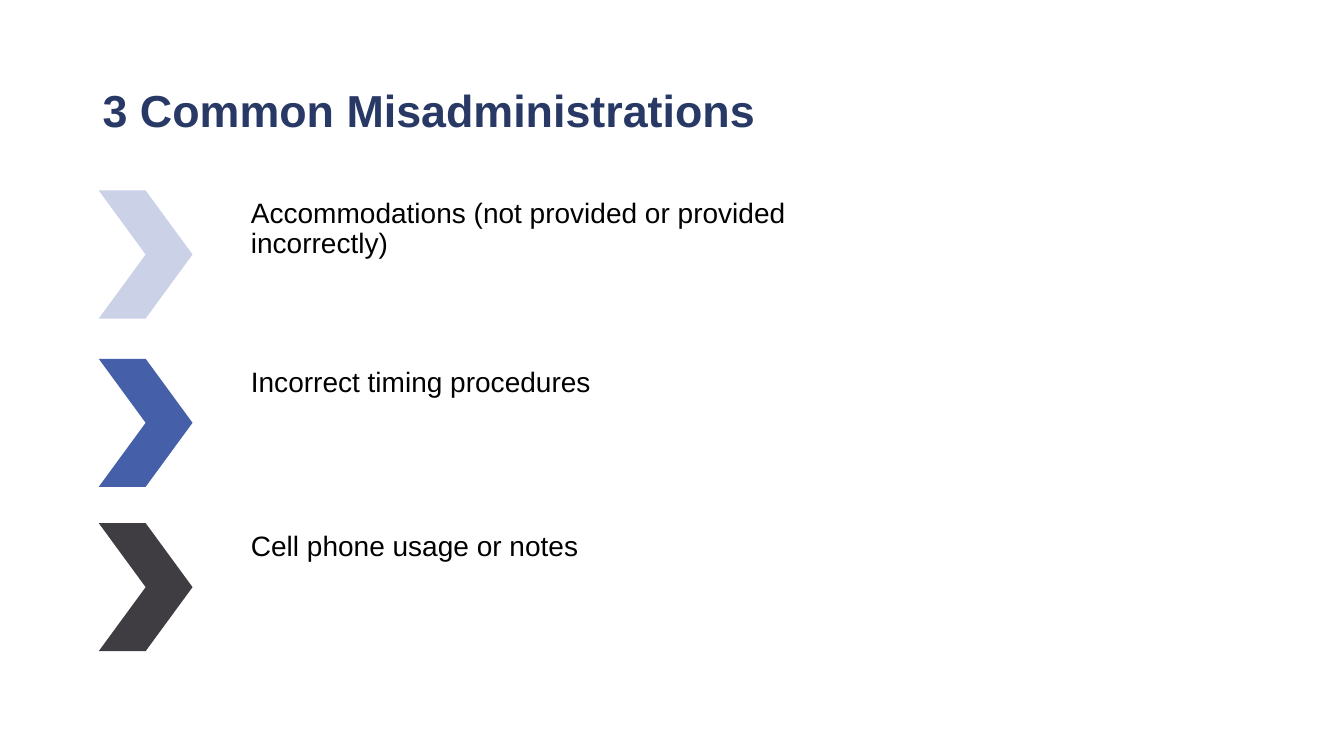
from pptx import Presentation
from pptx.dml.color import RGBColor
from pptx.enum.shapes import MSO_SHAPE
from pptx.enum.text import MSO_ANCHOR
from pptx.util import Inches, Pt

TITLE = "3 Common Misadministrations"
ITEMS = [
    (1.89, "CBD1E7", "Accommodations (not provided or provided incorrectly)"),
    (3.56, "455FA9", "Incorrect timing procedures"),
    (5.19, "403D42", "Cell phone usage or notes"),
]


def color(value):
    return RGBColor.from_string(value)


def add_text(page, place, text, size, ink, bold=False, anchor=MSO_ANCHOR.TOP, before=0):
    box = page.shapes.add_textbox(*map(Inches, place))
    frame = box.text_frame
    frame.word_wrap = True
    frame.vertical_anchor = anchor
    para = frame.paragraphs[0]
    para.text = text
    para.line_spacing = 0.9
    para.space_before = Pt(before)
    para.font.name = "Arial"
    para.font.size = Pt(size)
    para.font.bold = bold
    para.font.color.rgb = color(ink)


def add_chevron(page, place, fill):
    chevron = page.shapes.add_shape(MSO_SHAPE.CHEVRON, *map(Inches, place))
    chevron.shadow.inherit = False
    chevron.fill.solid()
    chevron.fill.fore_color.rgb = color(fill)
    chevron.line.fill.background()


def main():
    deck = Presentation()
    deck.slide_width = Inches(13.33)
    deck.slide_height = Inches(7.5)
    page = deck.slides.add_slide(deck.slide_layouts[6])
    add_text(page, (0.92, 0.4, 11.5, 1.45), TITLE, 32, "293965",
             bold=True, anchor=MSO_ANCHOR.MIDDLE)
    for top, fill, text in ITEMS:
        add_text(page, (2.39, top + 0.04, 5.67, 1.2), text, 20, "000000", before=10)
        add_chevron(page, (0.98, top, 0.93, 1.27), fill)
    deck.save("out.pptx")


if __name__ == "__main__":
    main()
